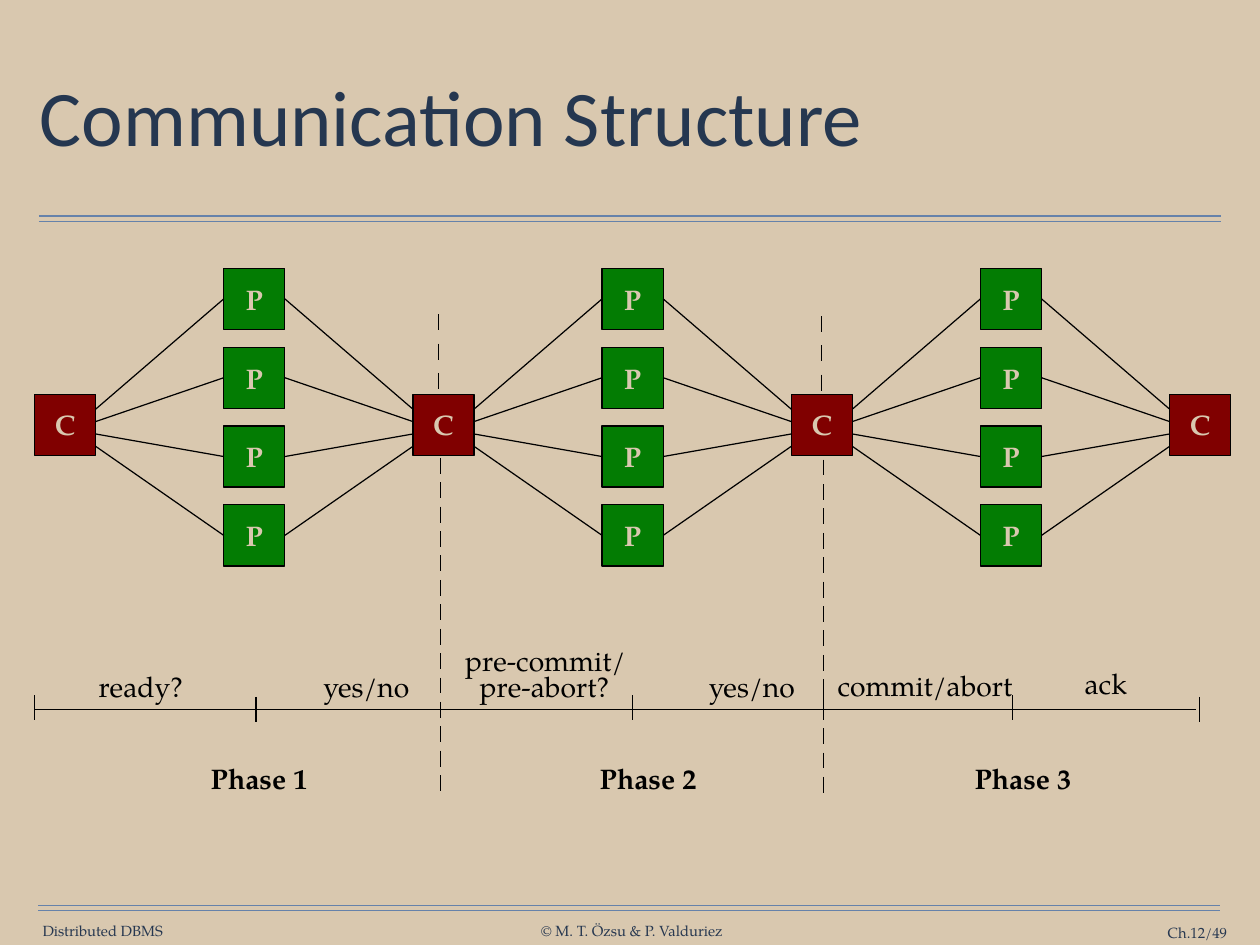
from lxml import etree
from pptx import Presentation
from pptx.dml.color import RGBColor as RGB
from pptx.enum.shapes import MSO_CONNECTOR as CONN, MSO_SHAPE as SHAPE
from pptx.enum.text import MSO_ANCHOR as ANCHOR, PP_ALIGN as ALIGN
from pptx.oxml.ns import qn
from pptx.util import Inches, Pt

COLORS = {"bg": "D9C8AF", "rule": "6682AA", "title": "253750", "footer": "263750",
          "coordinator": "800000", "participant": "037C03", "ink": "000000"}
BODY, HEAD = "TeX Gyre Pagella", "Calibri"
SIDE = 0.69
LEFT, RIGHT = 1, 3


class Deck:
    """Draws styled elements on the current slide."""

    def __init__(self, width, height):
        self.prs = Presentation()
        self.prs.slide_width, self.prs.slide_height = Inches(width), Inches(height)

    def add_slide(self):
        self.s = self.prs.slides.add_slide(self.prs.slide_layouts[6])
        fill = self.s.background.fill
        fill.solid()
        fill.fore_color.rgb = RGB.from_string(COLORS["bg"])

    def set_text(self, sp, text, size, color, font=BODY, bold=False,
                 align=ALIGN.CENTER, anchor=ANCHOR.TOP, inset=(0, 0), wrap=False):
        tf = sp.text_frame
        tf.word_wrap = wrap
        tf.vertical_anchor = anchor
        tf.margin_left = tf.margin_right = Inches(inset[0])
        tf.margin_top = tf.margin_bottom = Inches(inset[1])
        tf.text = text
        p = tf.paragraphs[0]
        p.alignment = align
        r = p.runs[0]
        r.font.name, r.font.size, r.font.bold = font, Pt(size), bold
        r.font.color.rgb = RGB.from_string(COLORS[color])
        return p

    def text(self, text, x, y, w, h, size, color, **style):
        sp = self.s.shapes.add_textbox(Inches(x), Inches(y), Inches(w), Inches(h))
        return self.set_text(sp, text, size, color, **style)

    def label(self, text, x, y, w, bold=False):
        self.text(text, x, y, w, 0.53, 23, "ink", bold=bold, inset=(0.14, 0.07))

    def node(self, letter, x, y, color):
        sp = self.s.shapes.add_shape(SHAPE.RECTANGLE, Inches(x), Inches(y),
                                     Inches(SIDE), Inches(SIDE))
        sp.shadow.inherit = False
        sp.fill.solid()
        sp.fill.fore_color.rgb = RGB.from_string(COLORS[color])
        sp.line.color.rgb = RGB.from_string(COLORS["ink"])
        sp.line.width = Pt(1)
        self.set_text(sp, letter, 23, "bg", bold=True, anchor=ANCHOR.MIDDLE)
        return sp

    def line(self, x1, y1, x2, y2, color="ink", gap=None):
        c = self.s.shapes.add_connector(CONN.STRAIGHT, Inches(x1), Inches(y1),
                                        Inches(x2), Inches(y2))
        c.line.color.rgb = RGB.from_string(COLORS[color])
        c.line.width = Pt(1)
        etree.SubElement(c._element.spPr, qn("a:effectLst"))
        if gap:
            ln = c._element.spPr.find(qn("a:ln"))
            dash = etree.SubElement(ln, qn("a:custDash"))
            etree.SubElement(dash, qn("a:ds"), d="1300000", sp=str(gap * 100000))
        return c


def draw_frame(deck):
    for x, y in ((0.44, 2.44), (0.43, 10.22)):
        for offset in (0, 0.06):
            deck.line(x, y + offset, x + 13.34, y + offset, "rule")
    footers = (("Distributed DBMS", 0.47, 10.41, 1.38, ALIGN.CENTER),
               ("© M. T. Özsu & P. Valduriez", 6.09, 10.41, 2.08, ALIGN.CENTER),
               ("Ch.12/49", 12.31, 10.43, 1.54, ALIGN.RIGHT))
    for text, x, y, w, align in footers:
        deck.text(text, x, y, w, 0.2, 12, "footer", align=align,
                  anchor=ANCHOR.MIDDLE, wrap=align == ALIGN.RIGHT)
    p = deck.text("Communication Structure", 0.39, 0.49, 13.44, 1.76, 64, "title",
                  font=HEAD, align=ALIGN.LEFT, anchor=ANCHOR.MIDDLE,
                  inset=(0.06, 0.06), wrap=True)
    p.line_spacing = 0.9


def draw_rounds(deck):
    start, step, phases = 0.39, 4.27, 3
    for i in range(phases + 1):
        deck.node("C", start + i * step, 4.45, "coordinator")
    for i in range(phases):
        x = start + i * step
        for row in range(4):
            y = 3.03 + row * 0.89
            p_node = deck.node("P", x + step / 2, y, "participant")
            port = 4.62 + row * 0.14
            mid = y + SIDE / 2
            request = deck.line(x + SIDE, port, x + step / 2, mid)
            request.end_connect(p_node, LEFT)
            reply = deck.line(x + step / 2 + SIDE, mid, x + step, port)
            reply.begin_connect(p_node, RIGHT)


def draw_timeline(deck):
    deck.line(0.39, 8.01, 13.5, 8.01)
    for x, y in ((0.39, 7.85), (2.89, 7.87), (7.14, 7.85), (9.29, 7.81),
                 (11.43, 7.85), (13.54, 7.87)):
        deck.line(x, y, x, y + 0.28)
    for x, y in ((4.95, 3.55), (9.27, 3.57)):
        deck.line(x, y, x, y + 0.85, gap=11)
        deck.line(x + 0.02, y + 1.62, x + 0.02, y + 5.39, gap=7)
    for text, x, y, w in (("ready?", 0.97, 7.49, 1.24), ("yes/no", 3.48, 7.49, 1.31),
                          ("pre-commit/", 5.08, 7.19, 2.15),
                          ("pre-abort?", 5.27, 7.49, 1.75),
                          ("yes/no", 7.83, 7.49, 1.31),
                          ("commit/abort", 9.28, 7.47, 2.32), ("ack", 12.09, 7.45, 0.78)):
        deck.label(text, x, y, w)
    for number, x in enumerate((2.23, 6.62, 10.85), 1):
        deck.label(f"Phase {number}", x, 8.53, 1.39, bold=True)


def main():
    deck = Deck(14.22, 10.67)
    deck.add_slide()
    draw_frame(deck)
    draw_rounds(deck)
    draw_timeline(deck)
    deck.prs.save("out.pptx")


if __name__ == "__main__":
    main()
